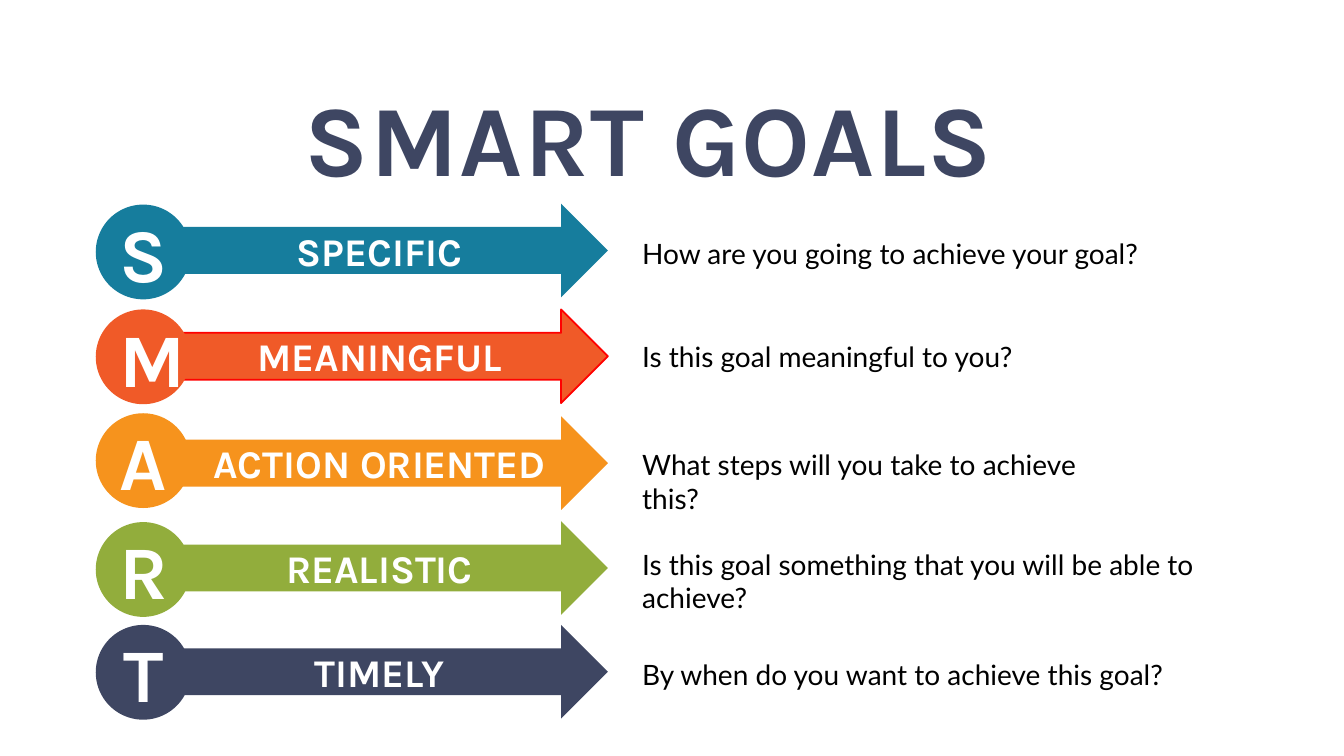
"""Build the SMART goals slide: lettered circles, arrows and guiding questions."""
from pptx import Presentation
from pptx.dml.color import RGBColor
from pptx.enum.shapes import MSO_SHAPE
from pptx.enum.text import MSO_ANCHOR, MSO_AUTO_SIZE, PP_ALIGN
from pptx.util import Inches, Pt

COLORS = {
    "teal": "167D9D",
    "orange": "F05A28",
    "amber": "F6931D",
    "green": "92AD3C",
    "navy": "3E4662",
    "red": "FF0000",
    "white": "FFFFFF",
    "black": "000000",
}

GOALS = [
    ("SPECIFIC", "teal", 2.02, 2.03, None),
    ("MEANINGFUL", "orange", 3.07, 3.07, "red"),
    ("ACTION ORIENTED", "amber", 4.13, 4.1, None),
    ("REALISTIC", "green", 5.17, 5.18, None),
    ("TIMELY", "navy", 6.2, 6.2, None),
]

QUESTIONS = [
    ("How are you going to achieve your goal?", 2.3, 5.48, 0.44),
    ("Is this goal meaningful to you?", 3.32, 4.99, 0.44),
    ("What steps will you take to achieve this?", 4.39, 4.99, 0.77),
    ("Is this goal something that you will be able to achieve?", 5.38, 6.32, 0.77),
    ("By when do you want to achieve this goal?", 6.47, 5.62, 0.44),
]


class SlideBuilder:
    heading_font = "Karla"
    body_font = "Lato"

    def __init__(self, page):
        self.page = page

    def color(self, name):
        return RGBColor.from_string(COLORS[name])

    def set_text(self, box, text, size, font, color, bold=False, align=PP_ALIGN.LEFT):
        box.text_frame.word_wrap = True
        box.text_frame.text = text
        para = box.text_frame.paragraphs[0]
        para.alignment = align
        span = para.runs[0]
        span.font.name = font
        span.font.size = Pt(size)
        span.font.bold = bold
        span.font.color.rgb = self.color(color)
        return para

    def text_box(self, left, top, width, height):
        return self.page.shapes.add_textbox(
            Inches(left), Inches(top), Inches(width), Inches(height))

    def title(self, text):
        box = self.text_box(1.12, 0.64, 10.63, 1.64)
        box.text_frame.vertical_anchor = MSO_ANCHOR.MIDDLE
        para = self.set_text(box, text, 72, self.heading_font, "navy", True, PP_ALIGN.CENTER)
        para.line_spacing = 0.8
        para.runs[0].font._element.set("spc", "100")

    def shape(self, kind, left, top, width, height, text, size, fill, line=None):
        shape = self.page.shapes.add_shape(
            kind, Inches(left), Inches(top), Inches(width), Inches(height))
        shape.shadow.inherit = False
        shape.fill.solid()
        shape.fill.fore_color.rgb = self.color(fill)
        if line:
            shape.line.color.rgb = self.color(line)
            shape.line.width = Pt(1.25)
        else:
            shape.line.fill.background()
        shape.text_frame.vertical_anchor = MSO_ANCHOR.MIDDLE
        self.set_text(shape, text, size, self.heading_font, "white", True, PP_ALIGN.CENTER)

    def arrow(self, text, top, fill, line):
        self.shape(MSO_SHAPE.RIGHT_ARROW, 1.73, top, 4.3, 0.93, text, 28, fill, line)

    def circle(self, letter, top, fill):
        self.shape(MSO_SHAPE.OVAL, 0.95, top, 0.94, 0.94, letter, 54, fill)

    def question(self, text, top, width, height):
        box = self.text_box(6.27, top, width, height)
        self.set_text(box, text, 20, self.body_font, "black")
        box.text_frame.auto_size = MSO_AUTO_SIZE.SHAPE_TO_FIT_TEXT


def main():
    deck = Presentation()
    deck.slide_width = Inches(13.33)
    deck.slide_height = Inches(7.5)
    builder = SlideBuilder(deck.slides.add_slide(deck.slide_layouts[6]))

    builder.title("SMART GOALS")
    for word, fill, arrow_top, _, line in GOALS:
        builder.arrow(word, arrow_top, fill, line)
    for word, fill, _, circle_top, _ in GOALS:
        builder.circle(word[0], circle_top, fill)
    for question in QUESTIONS:
        builder.question(*question)

    deck.save("out.pptx")


if __name__ == "__main__":
    main()
